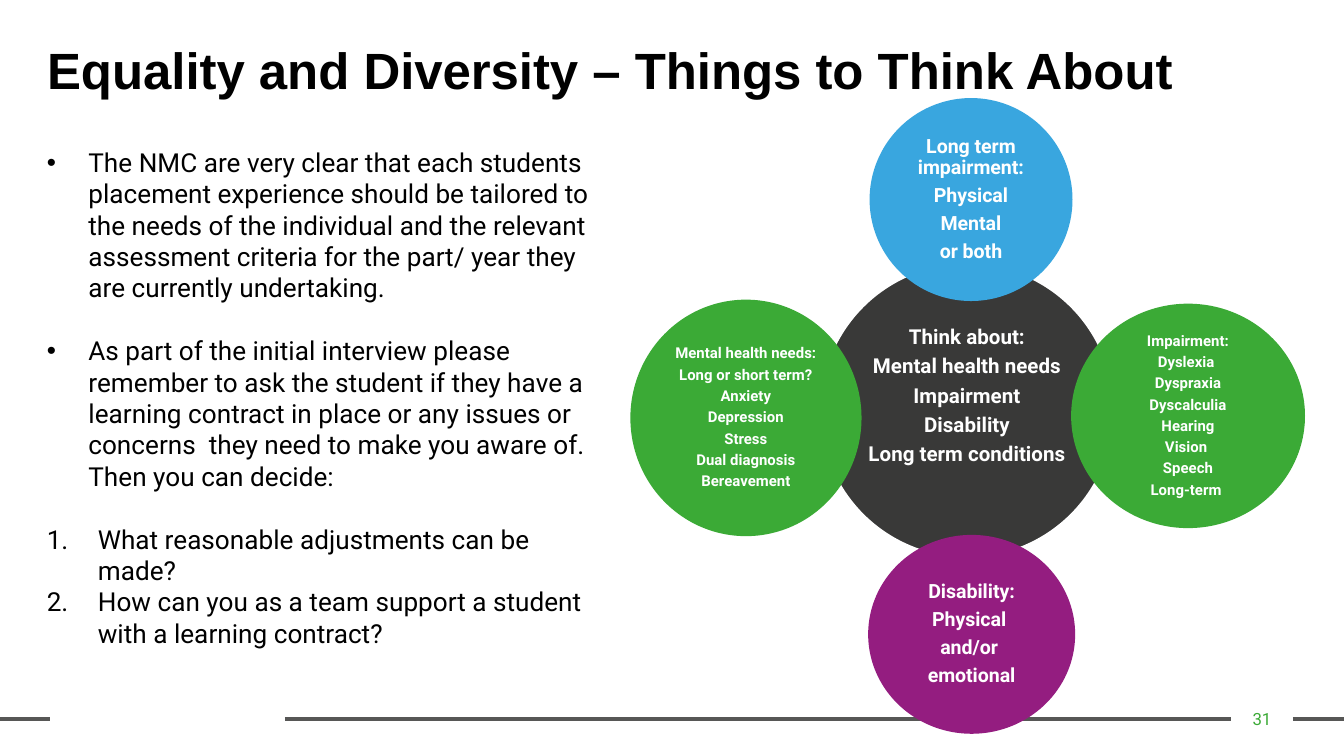
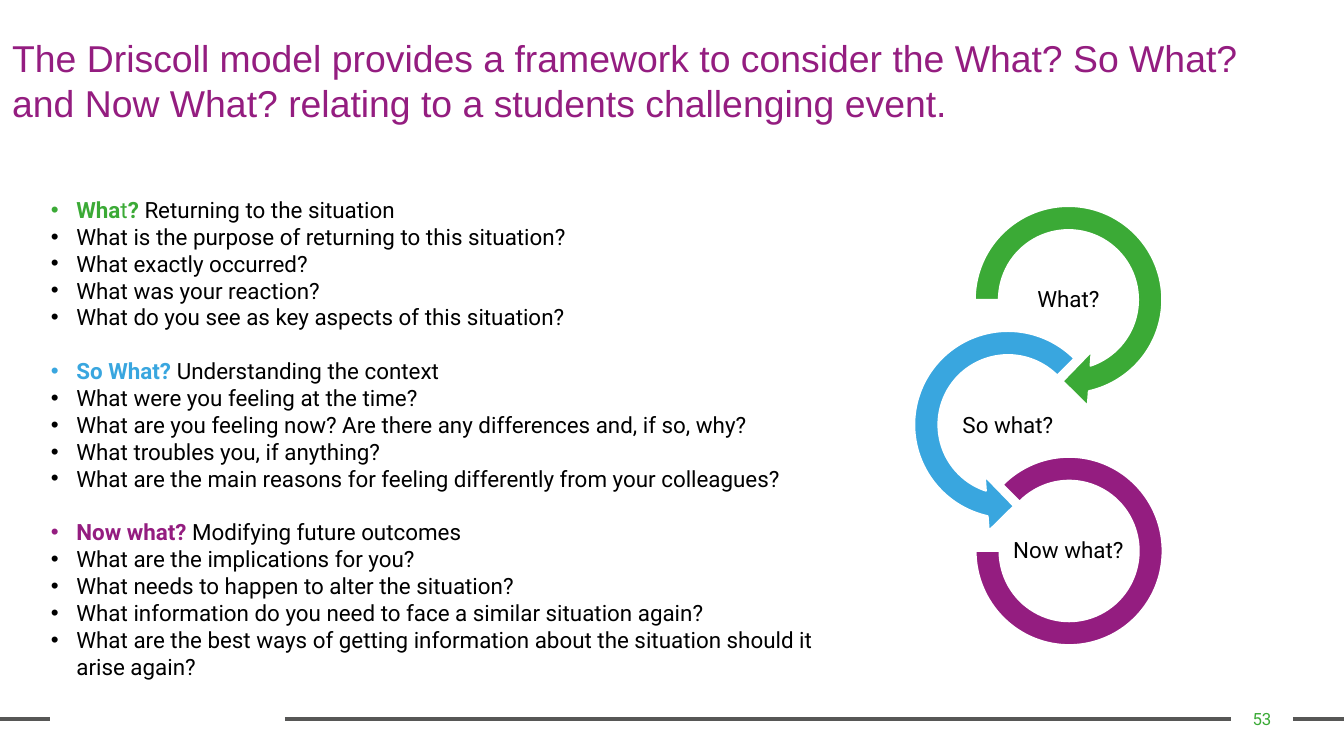
from lxml.etree import SubElement
from pptx import Presentation
from pptx.dml.color import RGBColor
from pptx.enum.shapes import MSO_CONNECTOR, MSO_SHAPE
from pptx.enum.text import MSO_ANCHOR, MSO_AUTO_SIZE, PP_ALIGN
from pptx.oxml.ns import qn
from pptx.util import Inches, Pt

BLACK, WHITE, GREY, CHARCOAL = "000000", "FFFFFF", "575756", "393938"
GREEN, BLUE, PURPLE = "3BAA36", "39A6DF", "941D80"
rgb = RGBColor.from_string


def write(tf, lines, size, color, bold=False, font="Roboto", align=PP_ALIGN.LEFT,
          anchor=MSO_ANCHOR.TOP, inset=(0.1, 0.05), label=False):
    """Fill a text frame; a line is a string or a list of (text, colour, bold) runs."""
    tf.word_wrap = True
    tf.auto_size = MSO_AUTO_SIZE.NONE
    tf.vertical_anchor = anchor
    tf.margin_left = tf.margin_right = Inches(inset[0])
    tf.margin_top = tf.margin_bottom = Inches(inset[1])
    for i, line in enumerate(lines):
        p = tf.paragraphs[0] if i == 0 else tf.add_paragraph()
        p.alignment = align
        if label:
            p.line_spacing = 0.9
            p.space_after = Pt(0.35 * size)
        for text, run_color, run_bold in [(line, color, bold)] if isinstance(line, str) else line:
            r = p.add_run()
            r.text = text
            r.font.size = Pt(size)
            r.font.name = font
            r.font.bold = run_bold
            r.font.color.rgb = rgb(run_color)


def add_bullet(p, indent, numbered=False):
    pPr = p._p.get_or_add_pPr()
    pPr.set("marL", str(Inches(indent)))
    pPr.set("indent", str(-Inches(indent)))
    if numbered:
        SubElement(pPr, qn("a:buFont"), typeface="+mj-lt")
        SubElement(pPr, qn("a:buAutoNum"), type="arabicPeriod")
    else:
        SubElement(pPr, qn("a:buFont"), typeface="Arial")
        SubElement(pPr, qn("a:buChar"), char="•")


prs = Presentation()
prs.slide_width = Inches(10)
prs.slide_height = Inches(10) * 9 // 16

# Titles and footers
titles = [
    (["Equality and Diversity – Things to Think About"],
     (0.25, 0.29, 10.47, 1.72), 27.3, BLACK, True, 0.9, "31"),
    (["The Driscoll model provides a framework to consider the What? So What?",
      "and Now What? relating to a students challenging event."],
     (-0.01, 0.21, 12.36, 0.77), 20, PURPLE, False, 1.0, "53"),
]
for lines, box, size, color, bold, spacing, number in titles:
    s = prs.slides.add_slide(prs.slide_layouts[5])
    title = s.shapes.title
    title.left, title.top, title.width, title.height = map(Inches, box)
    write(title.text_frame, lines, size, color, bold, "Arial")
    for p in title.text_frame.paragraphs:
        p.line_spacing = spacing
    for x1, x2 in [(9.62, 10), (2.12, 9.16), (-0.01, 0.37)]:
        rule = s.shapes.add_connector(MSO_CONNECTOR.STRAIGHT, Inches(x1), Inches(5.35),
                                      Inches(x2), Inches(5.35))
        rule.line.color.rgb = rgb(GREY)
        rule.line.width = Pt(2.25)
        SubElement(rule._element.spPr, qn("a:effectLst"))
    sp = s.shapes.add_textbox(Inches(9.16), Inches(5.2), Inches(0.46), Inches(0.3))
    write(sp.text_frame, [number], 9, GREEN, align=PP_ALIGN.CENTER,
          anchor=MSO_ANCHOR.MIDDLE, inset=(0.07, 0.04))

equality, driscoll = prs.slides

# Equality and diversity: guidance
guidance = [
    "The NMC are very clear that each students placement experience should be tailored to "
    "the needs of the individual and the relevant assessment criteria for the part/ year "
    "they are currently undertaking.",
    "As part of the initial interview please remember to ask the student if they have a "
    "learning contract in place or any issues or concerns  they need to make you aware of. "
    "Then you can decide:",
    "What reasonable adjustments can be made? ",
    "How can you as a team support a student with a learning contract?",
]
sp = equality.shapes.add_textbox(Inches(0.25), Inches(1.04), Inches(4.4), Inches(3.87))
write(sp.text_frame, guidance, 14, BLACK)
for i, p in enumerate(sp.text_frame.paragraphs):
    if i in (1, 2):
        p.space_before = Pt(16.8)
    numbered = i >= 2
    add_bullet(p, 0.38 if numbered else 0.31, numbered)
sp.text_frame.auto_size = MSO_AUTO_SIZE.SHAPE_TO_FIT_TEXT

# Equality and diversity: hub with four circles
circles = [
    ((6.1, 1.96, 2.19, 2.19), CHARCOAL, 11, 0.02,
     ["Think about:", "Mental health needs", "Impairment", "Disability",
      "Long term conditions"]),
    ((6.47, 0.73, 1.51, 1.51), BLUE, 10.5, 0.02,
     ["Long term impairment:", "Physical", "Mental", "or both"]),
    ((7.97, 2.26, 1.74, 1.67), GREEN, 8, 0.01,
     ["Impairment:", "Dyslexia ", "Dyspraxia", "Dyscalculia", "Hearing", "Vision ",
      "Speech", "Long-term "]),
    ((6.46, 3.98, 1.54, 1.48), PURPLE, 10.5, 0.02,
     ["Disability:", "Physical ", "and/or ", "emotional"]),
    ((4.69, 2.23, 1.72, 1.76), GREEN, 8, 0.01,
     ["Mental health needs:", "Long or short term?", "Anxiety", "Depression", "Stress",
      "Dual diagnosis", "Bereavement"]),
]
for box, color, size, inset, lines in circles:
    sp = equality.shapes.add_shape(MSO_SHAPE.OVAL, *map(Inches, box))
    sp.shadow.inherit = False
    sp.fill.solid()
    sp.fill.fore_color.rgb = rgb(color)
    write(sp.text_frame, lines, size, WHITE, True, align=PP_ALIGN.CENTER,
          anchor=MSO_ANCHOR.MIDDLE, inset=(inset, inset), label=True)
    if color == CHARCOAL:
        sp.line.color.rgb = rgb(WHITE)
        sp.line.width = Pt(1)
        sp.text_frame.margin_bottom = Inches(0.23)
    else:
        sp.line.fill.background()

# Driscoll model: questions
stages = [
    ([("Wha", GREEN, True), ("t", GREEN, False), ("? ", GREEN, True),
      ("Returning to the situation", BLACK, False)],
     ["What is the purpose of returning to this situation?",
      "What exactly occurred?",
      "What was your reaction?",
      "What do you see as key aspects of this situation?"]),
    ([("So What? ", BLUE, True), ("Understanding the context", BLACK, False)],
     ["What were you feeling at the time?",
      "What are you feeling now? Are there any differences and, if so, why?",
      "What troubles you, if anything?",
      "What are the main reasons for feeling differently from your colleagues?"]),
    ([("Now what? ", PURPLE, True), ("Modifying future outcomes", BLACK, False)],
     ["What are the implications for you?",
      "What needs to happen to alter the situation?",
      "What information do you need to face a similar situation again?",
      "What are the best ways of getting information about the situation should it "
      "arise again?"]),
]
lines = [line for heading, questions in stages for line in [heading, *questions]]
sp = driscoll.shapes.add_textbox(Inches(0.28), Inches(1.41), Inches(6.24), Inches(3.94))
write(sp.text_frame, lines, 12, BLACK)
for i, p in enumerate(sp.text_frame.paragraphs):
    if i in (5, 10):
        p.space_before = Pt(14.4)
    add_bullet(p, 0.19)
sp.text_frame.auto_size = MSO_AUTO_SIZE.SHAPE_TO_FIT_TEXT

# Driscoll model: chain of arrows
arrows = [
    (MSO_SHAPE.CIRCULAR_ARROW, (7.14, 1.42, 1.62, 1.62), (0.11, 11.42, 45, 108, 0.125),
     GREEN, "What?", 7.5, 2.01),
    (MSO_SHAPE.LEFT_CIRCULAR_ARROW, (6.69, 2.35, 1.62, 1.62), (0.11, 11.42, 63, 189, 0.125),
     BLUE, "So what?", 7.05, 2.95),
    (MSO_SHAPE.BLOCK_ARC, (7.26, 3.4, 1.39, 1.4), (135, 108, 0.127),
     PURPLE, "Now what?", 7.5, 3.88),
]
for kind, box, adjustments, color, label, x, y in arrows:
    sp = driscoll.shapes.add_shape(kind, *map(Inches, box))
    for i, value in enumerate(adjustments):
        sp.adjustments[i] = value
    sp.shadow.inherit = False
    sp.fill.solid()
    sp.fill.fore_color.rgb = rgb(color)
    sp.line.color.rgb = rgb(WHITE)
    sp.line.width = Pt(1)
    sp = driscoll.shapes.add_textbox(Inches(x), Inches(y), Inches(0.9), Inches(0.45))
    write(sp.text_frame, [label], 12, BLACK, align=PP_ALIGN.CENTER,
          anchor=MSO_ANCHOR.MIDDLE, inset=(0.01, 0.01), label=True)

prs.save("out.pptx")
